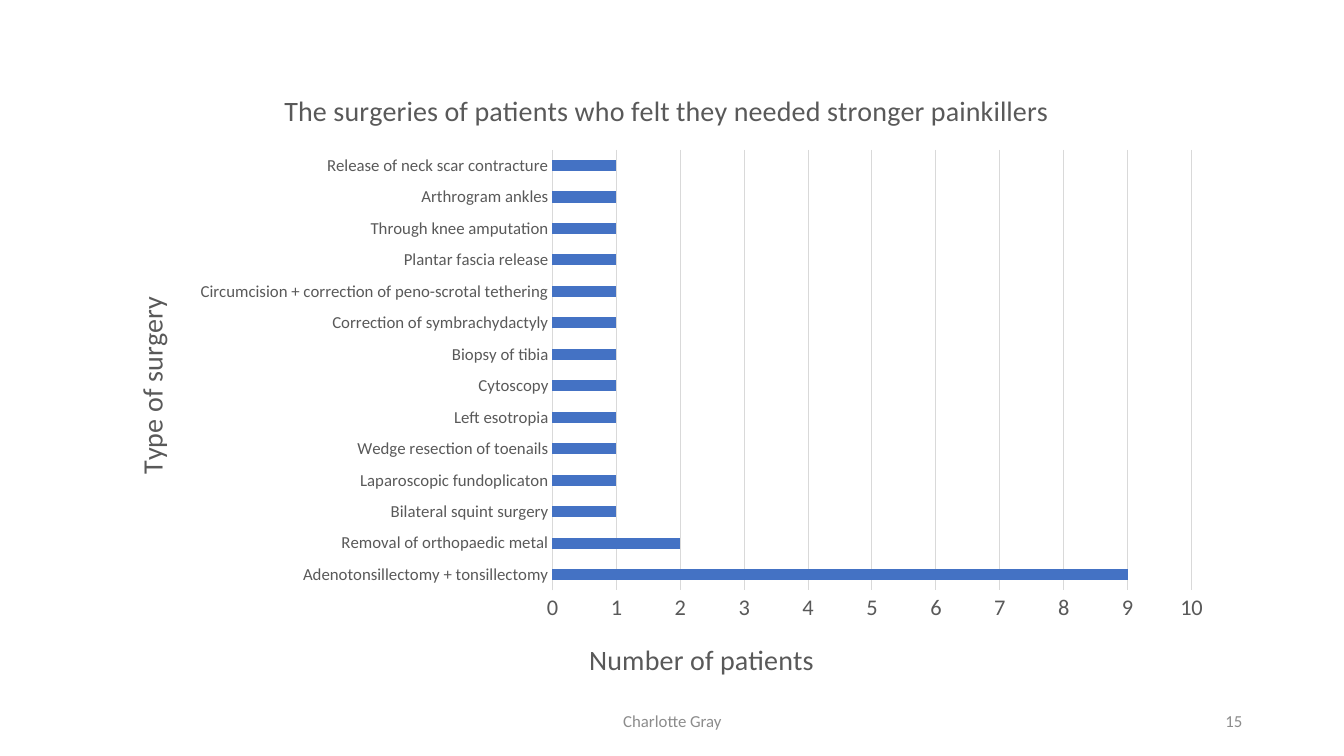
from pptx import Presentation
from pptx.chart.data import CategoryChartData
from pptx.dml.color import RGBColor
from pptx.enum.chart import XL_CHART_TYPE, XL_TICK_MARK
from pptx.enum.text import MSO_ANCHOR, PP_ALIGN
from pptx.util import Pt

PX = 9144
FONT = "Calibri"
BLUE = RGBColor(0x44, 0x72, 0xC4)
DARK_GRAY = RGBColor(0x59, 0x59, 0x59)
FOOTER_GRAY = RGBColor(0x8C, 0x8C, 0x8C)
LIGHT_GRAY = RGBColor(0xD9, 0xD9, 0xD9)

SURGERIES = {
    "Adenotonsillectomy + tonsillectomy": 9,
    "Removal of orthopaedic metal": 2,
    "Bilateral squint surgery": 1,
    "Laparoscopic fundoplicaton": 1,
    "Wedge resection of toenails": 1,
    "Left esotropia": 1,
    "Cytoscopy": 1,
    "Biopsy of tibia": 1,
    "Correction of symbrachydactyly": 1,
    "Circumcision + correction of peno-scrotal tethering": 1,
    "Plantar fascia release": 1,
    "Through knee amputation": 1,
    "Arthrogram ankles": 1,
    "Release of neck scar contracture": 1,
}


def format_font(font, size, color):
    values = {"name": FONT, "size": Pt(size), "bold": False}
    for name, value in values.items():
        setattr(font, name, value)
    font.color.rgb = color


presentation = Presentation()
presentation.slide_width = 1333 * PX
presentation.slide_height = 750 * PX
slide = presentation.slides.add_slide(presentation.slide_layouts[6])

chart_data = CategoryChartData()
chart_data.categories = list(SURGERIES)
chart_data.add_series("Series 1", list(SURGERIES.values()))
chart = slide.shapes.add_chart(
    XL_CHART_TYPE.BAR_CLUSTERED, 108 * PX, 67 * PX, 1107 * PX, 630 * PX, chart_data
).chart
chart.has_legend = False
format_font(chart.font, 10, DARK_GRAY)

plot = chart.plots[0]
plot.gap_width = 182
plot.vary_by_categories = False
bar_fill = plot.series[0].format.fill
bar_fill.solid()
bar_fill.fore_color.rgb = BLUE

surgery_axis = chart.category_axis
patient_axis = chart.value_axis
axis_values = {
    "major_tick_mark": XL_TICK_MARK.NONE,
    "minor_tick_mark": XL_TICK_MARK.NONE,
}
for axis, label_size in ((surgery_axis, 12), (patient_axis, 16)):
    for name, value in axis_values.items():
        setattr(axis, name, value)
    format_font(axis.tick_labels.font, label_size, DARK_GRAY)

scale_values = {"minimum_scale": 0, "maximum_scale": 10, "major_unit": 1}
for name, value in scale_values.items():
    setattr(patient_axis, name, value)
patient_axis.has_major_gridlines = True
patient_axis.format.line.fill.background()
for line in (surgery_axis.format.line, patient_axis.major_gridlines.format.line):
    line.width = Pt(0.75)
    line.color.rgb = LIGHT_GRAY

for title, text in (
    (chart.chart_title, "The surgeries of patients who felt they needed stronger painkillers"),
    (surgery_axis.axis_title, "Type of surgery"),
    (patient_axis.axis_title, "Number of patients"),
):
    paragraph = title.text_frame.paragraphs[0]
    run = paragraph.add_run()
    run.text = text
    for font in (paragraph.font, run.font):
        format_font(font, 20, DARK_GRAY)

for left, width, text, alignment in (
    (442, 450, "Charlotte Gray", PP_ALIGN.CENTER),
    (942, 300, "15", PP_ALIGN.RIGHT),
):
    text_frame = slide.shapes.add_textbox(left * PX, 695 * PX, width * PX, 40 * PX).text_frame
    text_frame.word_wrap = True
    text_frame.vertical_anchor = MSO_ANCHOR.MIDDLE
    paragraph = text_frame.paragraphs[0]
    paragraph.alignment = alignment
    run = paragraph.add_run()
    run.text = text
    format_font(run.font, 12, FOOTER_GRAY)

presentation.save("out.pptx")
